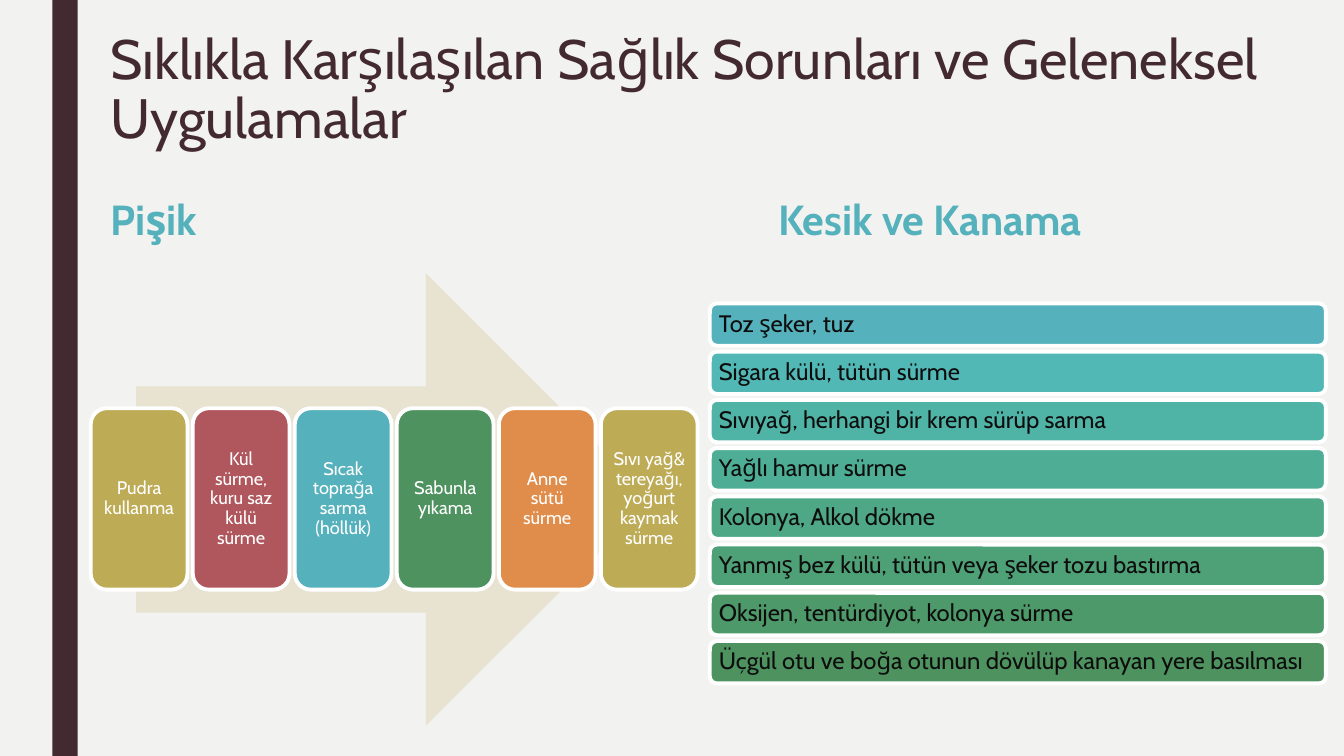
import pptx
import pptx.util
import pptx.dml.color
import pptx.enum.shapes
import pptx.enum.text

Inches = pptx.util.Inches
Pt = pptx.util.Pt
RGB = pptx.dml.color.RGBColor
Shape = pptx.enum.shapes.MSO_SHAPE
Align = pptx.enum.text.PP_ALIGN
Anchor = pptx.enum.text.MSO_ANCHOR

PAPER = RGB(0xF2, 0xF2, 0xF0)
PLUM = RGB(0x43, 0x2A, 0x30)
SAND = RGB(0xE8, 0xE2, 0xD1)
WHITE = RGB(0xFF, 0xFF, 0xFF)
INK = RGB(0x0D, 0x0D, 0x0D)
GOLD = RGB(0xBD, 0xAB, 0x56)
ROSE = RGB(0xB0, 0x56, 0x5D)
TEAL = RGB(0x55, 0xB1, 0xBC)
GREEN = RGB(0x4D, 0x92, 0x5F)
ORANGE = RGB(0xE0, 0x8C, 0x4A)
AQUA = RGB(0x52, 0xB8, 0xB6)
SEA = RGB(0x4F, 0xB3, 0xA6)
JADE = RGB(0x4E, 0xAE, 0x95)
MINT = RGB(0x4E, 0xA7, 0x85)
FERN = RGB(0x4E, 0xA0, 0x77)
MOSS = RGB(0x4D, 0x99, 0x6A)

deck = pptx.Presentation()
deck.slide_width = Inches(13.33)
deck.slide_height = Inches(7.5)
slide = deck.slides.add_slide(deck.slide_layouts[6])
slide.background.fill.solid()
slide.background.fill.fore_color.rgb = PAPER


def write(shape, text, size, color, bold=False, align=Align.LEFT,
          anchor=Anchor.MIDDLE, space=0.9, side=0.1, edge=0.05):
    frame = shape.text_frame
    frame.word_wrap = True
    frame.vertical_anchor = anchor
    frame.margin_left = frame.margin_right = Inches(side)
    frame.margin_top = frame.margin_bottom = Inches(edge)
    para = frame.paragraphs[0]
    para.alignment = align
    para.line_spacing = space
    run = para.add_run()
    run.text = text
    run.font.name = "Cabin"
    run.font.size = Pt(size)
    run.font.bold = bold
    run.font.color.rgb = color


def draw(kind, left, top, width, height, fill, line=None):
    shape = slide.shapes.add_shape(
        kind, Inches(left), Inches(top), Inches(width), Inches(height))
    shape.shadow.inherit = False
    shape.fill.solid()
    shape.fill.fore_color.rgb = fill
    if line is None:
        shape.line.fill.background()
    else:
        shape.line.color.rgb = line
        shape.line.width = Pt(2.75)
    return shape


draw(Shape.RECTANGLE, 0.52, 0, 0.25, 7.5, PLUM)
draw(Shape.RIGHT_ARROW, 1.35, 2.71, 5.12, 4.49, SAND)

cards = [
    ("Pudra kullanma", GOLD),
    ("Kül sürme, kuru saz külü sürme", ROSE),
    ("Sıcak toprağa sarma (höllük)", TEAL),
    ("Sabunla yıkama", GREEN),
    ("Anne sütü sürme", ORANGE),
    ("Sıvı yağ& tereyağı, yoğurt kaymak sürme", GOLD),
]
for i, (text, fill) in enumerate(cards):
    card = draw(Shape.ROUNDED_RECTANGLE, 0.9 + 1.012 * i, 4.05, 0.96, 1.8,
                fill, WHITE)
    write(card, text, 13, WHITE, align=Align.CENTER, side=0.05)

bars = [
    ("Toz şeker, tuz", TEAL),
    ("Sigara külü, tütün sürme", AQUA),
    ("Sıvıyağ, herhangi bir krem sürüp sarma", SEA),
    ("Yağlı hamur sürme", JADE),
    ("Kolonya, Alkol dökme", MINT),
    ("Yanmış bez külü, tütün veya şeker tozu bastırma", FERN),
    ("Oksijen, tentürdiyot, kolonya sürme", MOSS),
    ("Üçgül otu ve boğa otunun dövülüp kanayan yere basılması", GREEN),
]
for i, (text, fill) in enumerate(bars):
    bar = draw(Shape.ROUNDED_RECTANGLE, 7.04, 3.01 + 3.35 / 7 * i, 6.11, 0.42,
               fill, WHITE)
    write(bar, text, 17, INK, side=0.07)

title = slide.shapes.add_textbox(
    Inches(1), Inches(0.27), Inches(12.15), Inches(1.55))
write(title, "Sıklıkla Karşılaşılan Sağlık Sorunları ve Geleneksel Uygulamalar",
      39.6, PLUM, anchor=Anchor.TOP, space=0.89)

for text, left in [("Pişik", 1), ("Kesik ve Kanama", 7.62)]:
    head = slide.shapes.add_textbox(
        Inches(left), Inches(1.57), Inches(4.86), Inches(0.9))
    write(head, text, 30, TEAL, bold=True, anchor=Anchor.BOTTOM, space=0.84)

deck.save("out.pptx")
